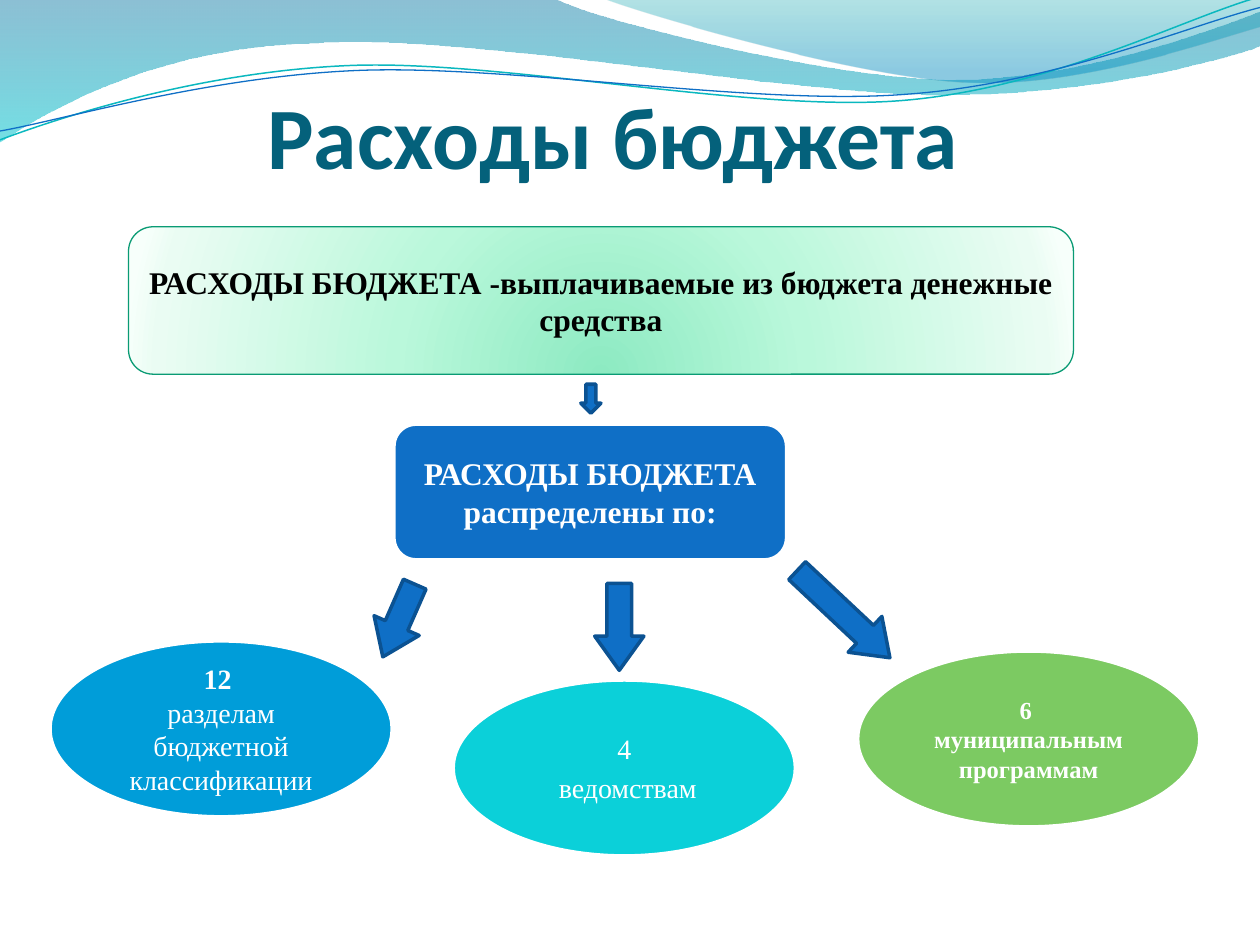
import math

import pptx
import pptx.util
import pptx.dml.color
import pptx.enum.shapes
import pptx.enum.text
import pptx.oxml
import pptx.oxml.ns

Inches = pptx.util.Inches
Pt = pptx.util.Pt
RGB = pptx.dml.color.RGBColor.from_string
SHAPE = pptx.enum.shapes.MSO_SHAPE
ANCHOR = pptx.enum.text.MSO_ANCHOR
qn = pptx.oxml.ns.qn
NAMESPACE = pptx.oxml.ns.nsdecls("a")

COLORS = {
    "title": "04617B", "black": "000000", "white": "FFFFFF",
    "blue": "0F6FC6", "arrow edge": "0B5292", "teal line": "0AB8BF",
    "sky": "009DD9", "cyan": "0BD0D9", "green": "7CCA62", "mint edge": "0A9B74",
}


def fill_gradient(shape, stops, direction):
    """Stops are (position %, colour, opacity %); direction is lin or path XML."""
    shape.fill.background()
    stop_xml = ""
    for position, color, opacity in stops:
        alpha = f'<a:alpha val="{opacity * 1000}"/>' if opacity < 100 else ""
        stop_xml += (f'<a:gs pos="{position * 1000}">'
                     f'<a:srgbClr val="{color}">{alpha}</a:srgbClr></a:gs>')
    gradient = pptx.oxml.parse_xml(
        f'<a:gradFill {NAMESPACE} rotWithShape="1">'
        f'<a:gsLst>{stop_xml}</a:gsLst>{direction}</a:gradFill>')
    properties = shape.element.spPr
    properties.replace(properties.find(qn("a:noFill")), gradient)


def write_text(box, lines, color, formats, anchor=ANCHOR.MIDDLE, space=0):
    """Lines are (text, bold) pairs, one paragraph each."""
    frame = box.text_frame
    frame.word_wrap = True
    frame.vertical_anchor = anchor
    for number, (text, bold) in enumerate(lines):
        para = frame.paragraphs[0] if number == 0 else frame.add_paragraph()
        para.alignment = pptx.enum.text.PP_ALIGN.CENTER
        para.space_before = Pt(space)
        span = para.add_run()
        span.text = text
        span.font.color.rgb = RGB(COLORS[color])
        for name, value in {**formats, "bold": bold}.items():
            setattr(span.font, name, value)


deck = pptx.Presentation()
deck.slide_width, deck.slide_height = Inches(10), Inches(7.5)
page = deck.slides.add_slide(deck.slide_layouts[6])

# Waves at the top: six numbers make a Bezier segment, two a straight one
DOWN = '<a:lin ang="5400000" scaled="0"/>'
TILT = 2.7
waves = [
    ((0, 0), [(4.4, -0.01), (4.76, 0.17, 6.64, 0.63, 7.58, 0.63),
              (8.53, 0.63, 9.58, 0.26, 10, 0.09), (10.01, 0.36),
              (9.83, 0.44, 8.7, 0.76, 7.46, 0.75),
              (6.22, 0.75, 3.82, 0.28, 2.57, 0.34),
              (1.29, 0.36, 0.46, 0.83, -0.01, 1.13)],
     [(0, "0074A1", 45), (100, "00C6CF", 55)], None, None),
    ((4.79, -0.01), [(5.09, 0.11, 6.82, 0.62, 7.69, 0.65),
                     (8.56, 0.69, 9.61, 0.32, 10, 0.21), (10, 0)],
     [(0, "00A1A9", 30), (80, "008BBF", 45)], None, None),
    ((0, 1.11), [(0.48, 0.93, 1.58, 0.57, 2.77, 0.52),
                 (3.95, 0.47, 5.93, 0.89, 7.13, 0.8),
                 (8.33, 0.71, 9.38, 0.15, 9.98, -0.02)],
     None, ("teal line", 0.85), (4.99, 0.58)),
    ((0, 1.04), [(0.47, 0.96, 1.64, 0.61, 2.83, 0.56),
                 (4.03, 0.51, 5.97, 0.84, 7.17, 0.75),
                 (8.36, 0.67, 9.41, 0.21, 10, 0.06)],
     None, ("blue", 0.75), (5, 0.59)),
]
for start, segments, stops, line, pivot in waves:
    points = [start] + [segment[i:i + 2] for segment in segments
                        for i in range(0, len(segment), 2)]
    if pivot:
        # Level the tilted line; the rotation of the shape tilts it again
        cos, sin = math.cos(math.radians(TILT)), math.sin(math.radians(TILT))
        offsets = [(x - pivot[0], y - pivot[1]) for x, y in points]
        points = [(pivot[0] + x * cos - y * sin, pivot[1] + x * sin + y * cos)
                  for x, y in offsets]
    points = [(Inches(x), Inches(y)) for x, y in points]
    builder = page.shapes.build_freeform(*points[0])
    builder.add_line_segments(points[1:], close=stops is not None)
    wave = builder.convert_to_shape()
    wave.shadow.inherit = False

    # Join each three points of a curved segment into one Bezier
    corners = iter(list(wave.element.iter(qn("a:lnTo"))))
    for segment in segments:
        corner = next(corners)
        if len(segment) == 6:
            curve = pptx.oxml.parse_xml(f"<a:cubicBezTo {NAMESPACE}/>")
            corner.addprevious(curve)
            for part in (corner, next(corners), next(corners)):
                curve.append(part[0])
                part.getparent().remove(part)

    if stops:
        fill_gradient(wave, stops, DOWN)
        wave.line.fill.background()
    else:
        wave.rotation = 360 - TILT
        wave.fill.background()
        wave.line.color.rgb = RGB(COLORS[line[0]])
        wave.line.width = Pt(line[1])

# Title
title = page.shapes.add_textbox(Inches(0.23), Inches(0.29), Inches(9.27), Inches(1.19))
margins = {"margin_left": 0, "margin_top": Inches(0.05), "margin_right": 0, "margin_bottom": 0}
for name, value in margins.items():
    setattr(title.text_frame, name, value)
write_text(title, [("Расходы бюджета", True)], "title",
           {"size": Pt(50), "name": "Calibri"}, ANCHOR.BOTTOM)

# Boxes and ellipses: shape, place, fill, edge, edge width, text colour, size, space, lines
blocks = [
    (SHAPE.OVAL, (3.59, 5.39, 2.73, 1.41), "cyan", "white", 3, "white", 16, 3.2,
     [("4", False), (" ведомствам", False)]),
    (SHAPE.ROUNDED_RECTANGLE, (1.02, 1.8, 7.5, 1.17), None, "mint edge", 0.75, "black", 18, 0,
     [("РАСХОДЫ БЮДЖЕТА -выплачиваемые из бюджета денежные средства", True)]),
    (SHAPE.ROUNDED_RECTANGLE, (3.12, 3.36, 3.13, 1.09), "blue", "white", 3, "white", 18, 0,
     [("РАСХОДЫ БЮДЖЕТА распределены по:", True)]),
    (SHAPE.OVAL, (0.39, 5.08, 2.73, 1.41), "sky", "white", 3, "white", 16, 0,
     [("12 ", True), ("разделам бюджетной классификации", False)]),
    (SHAPE.OVAL, (6.8, 5.16, 2.73, 1.41), "green", "white", 3, "white", 14, 0,
     [("6 ", True), ("муниципальным программам", True)]),
]
MINT = [(0, "8DEAC2", 100), (43, "BAF8DB", 100), (93, "EAFCF3", 100), (100, "F7FFFB", 100)]
GLOW = '<a:path path="circle"><a:fillToRect l="50000" t="130000" r="50000" b="-30000"/></a:path>'
for kind, place, fill, edge, width, color, size, space, lines in blocks:
    box = page.shapes.add_shape(kind, *map(Inches, place))
    box.shadow.inherit = False
    if fill:
        box.fill.solid()
        box.fill.fore_color.rgb = RGB(COLORS[fill])
    else:
        fill_gradient(box, MINT, GLOW)
    box.line.color.rgb = RGB(COLORS[edge])
    box.line.width = Pt(width)
    write_text(box, lines, color, {"size": Pt(size), "name": "Times New Roman"}, space=space)

# Arrows: place, rotation, head length
arrows = [
    ((4.61, 3.05, 0.16, 0.23), 0, 0.5),
    ((2.97, 4.61, 0.39, 0.63), 23.7, 0.695),
    ((4.72, 4.63, 0.39, 0.69), 0, 0.695),
    ((6.5, 4.37, 0.39, 1.01), 313.2, 0.695),
]
for place, rotation, head in arrows:
    arrow = page.shapes.add_shape(SHAPE.DOWN_ARROW, *map(Inches, place))
    arrow.shadow.inherit = False
    arrow.rotation = rotation
    arrow.adjustments[1] = head
    arrow.fill.solid()
    arrow.fill.fore_color.rgb = RGB(COLORS["blue"])
    arrow.line.color.rgb = RGB(COLORS["arrow edge"])
    arrow.line.width = Pt(2)

deck.save("out.pptx")
